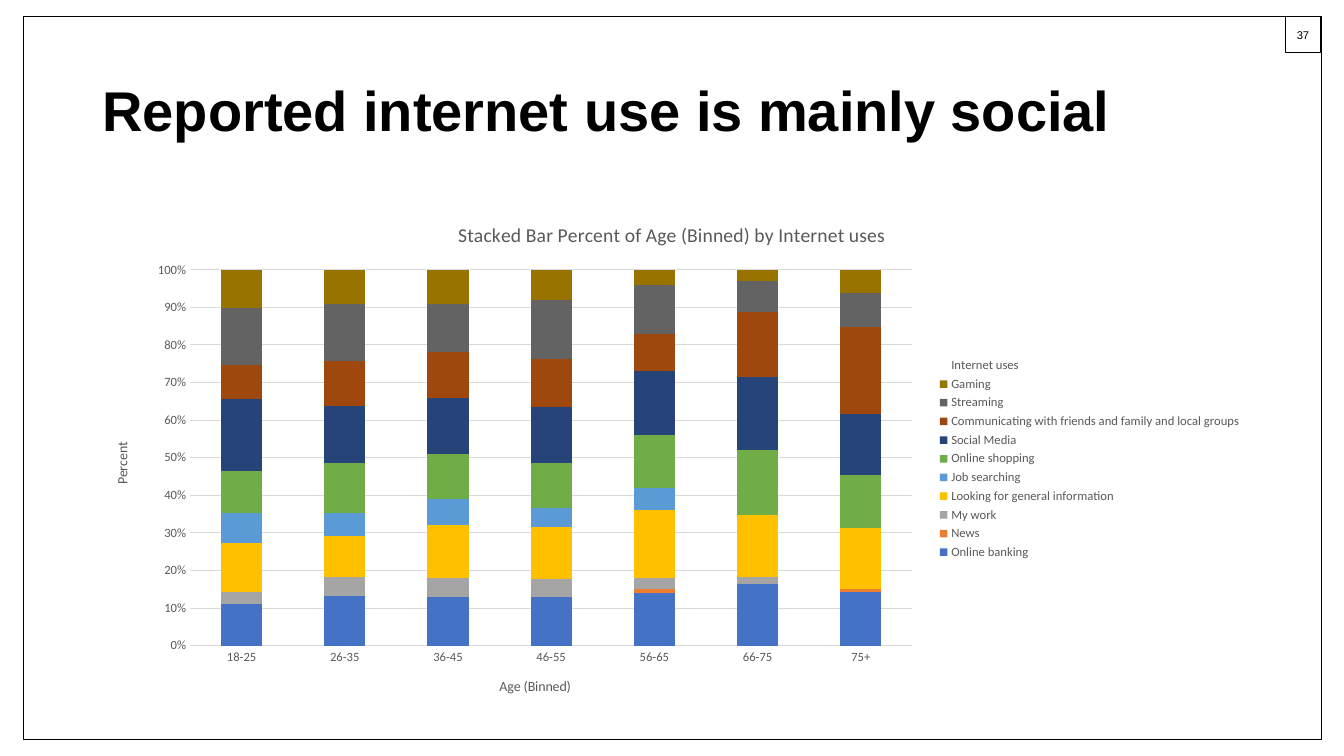
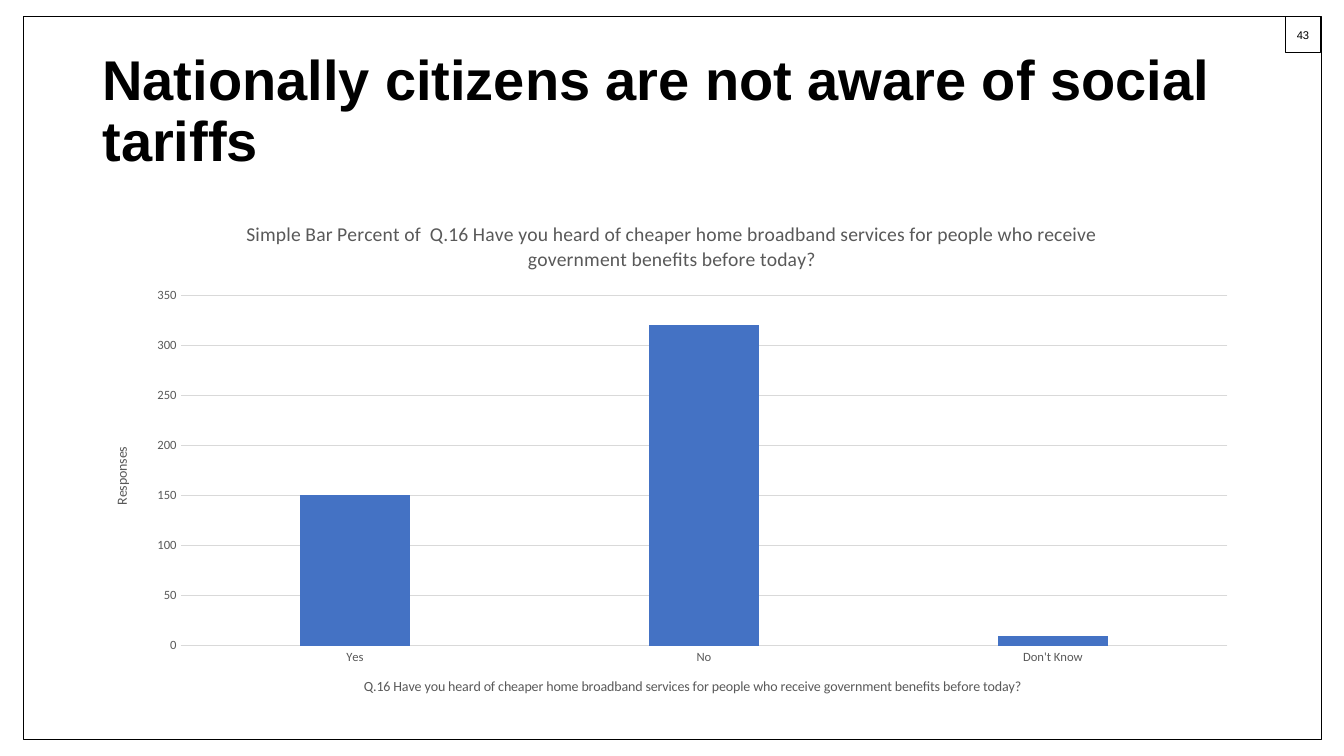
from lxml.etree import SubElement as Sub
from pptx import Presentation
from pptx.chart.data import CategoryChartData as Data
from pptx.dml.color import RGBColor as Rgb
from pptx.enum.chart import XL_CHART_TYPE as Kind, XL_LEGEND_POSITION as Side, XL_TICK_MARK as Tick
from pptx.enum.shapes import MSO_SHAPE as Form
from pptx.enum.text import MSO_ANCHOR as Anchor, MSO_AUTO_SIZE as Fit, PP_ALIGN as Align
from pptx.oxml.ns import qn
from pptx.util import Pt

PX = 9525
HEX = {
    "ink": "000000", "gray": "595959", "grid": "D9D9D9",
    "blue": "4472C4", "orange": "ED7D31", "silver": "A5A5A5", "gold": "FFC000",
    "sky": "5B9BD5", "green": "70AD47", "navy": "264478", "rust": "9E480E",
    "slate": "636363", "olive": "997300",
}
FRAME = (22, 16, 1236, 688)
TITLE = (88, 38, 1104, 139)
CHART = (88, 192, 1104, 490)
TAB = 34

USES = {
    "kind": Kind.COLUMN_STACKED_100,
    "title": "Stacked Bar Percent of Age (Binned) by Internet uses",
    "axes": ("Age (Binned)", "Percent"),
    "cats": ["18-25", "26-35", "36-45", "46-55", "56-65", "66-75", "75+"],
    "rows": [
        ("Online banking", [11, 13, 13, 13, 14, 16, 14], "blue"),
        ("News", [None, None, None, 0, 1, None, 1], "orange"),
        ("My work", [3, 5, 5, 5, 3, 2, None], "silver"),
        ("Looking for general information", [13, 11, 14, 14, 18, 16, 16], "gold"),
        ("Job searching", [8, 6, 7, 5, 6, 0, None], "sky"),
        ("Online shopping", [11, 13, 12, 12, 14, 17, 14], "green"),
        ("Social Media", [19, 15, 15, 15, 17, 19, 16], "navy"),
        ("Communicating with friends and family and local groups",
         [9, 12, 12, 13, 10, 17, 23], "rust"),
        ("Streaming", [15, 15, 13, 16, 13, 8, 9], "slate"),
        ("Gaming", [10, 9, 9, 8, 4, 3, 6], "olive"),
        ("Internet uses", [None] * 7, None),
    ],
    "plot": {"gap_width": 150, "overlap": 100},
    "area": (93, 65, 688, 358),
    "format": "0%",
    "legend": True,
}
AWARE = {
    "kind": Kind.COLUMN_CLUSTERED,
    "title": "Simple Bar Percent of  Q.16 Have you heard of cheaper home broadband "
             "services for people who receive government benefits before today?",
    "axes": ("Q.16 Have you heard of cheaper home broadband services for people "
             "who receive government benefits before today?", "Responses"),
    "cats": ["Yes", "No", "Don't Know"],
    "rows": [("Series 1", [150, 320, 10], "blue")],
    "plot": {"gap_width": 219, "overlap": -27},
    "area": (84, 89, 997, 334),
    "format": "General",
    "legend": False,
}
PAGES = [
    ("37", "Reported internet use is mainly social", USES),
    ("43", "Nationally citizens are not aware of social tariffs", AWARE),
]


def put(item, **vals):
    """Set each named attribute of an item."""
    for name, val in vals.items():
        setattr(item, name, val)


def emu(box):
    """Turn a box in px into EMU."""
    return [n * PX for n in box]


def style(font, size, tone="gray", face="Calibri", bold=False):
    """Format a font."""
    put(font, size=Pt(size), name=face, bold=bold)
    font.color.rgb = Rgb.from_string(HEX[tone])


def rule(line, tone, width):
    """Format a line."""
    line.color.rgb = Rgb.from_string(HEX[tone])
    line.width = Pt(width)


def rect(slide, box):
    """Draw an unfilled black outline and return it."""
    shape = slide.shapes.add_shape(Form.RECTANGLE, *emu(box))
    shape.shadow.inherit = False
    shape.fill.background()
    rule(shape.line, "ink", 0.5)
    return shape


def border(slide, box, num):
    """Frame the slide, with its number in the top right corner."""
    x, y, w, h = box
    tab = rect(slide, (x + w - TAB, y, TAB, TAB))
    frame = tab.text_frame
    put(frame, text=num, vertical_anchor=Anchor.MIDDLE, word_wrap=True,
        margin_left=0, margin_right=0)
    para = frame.paragraphs[0]
    para.alignment = Align.CENTER
    style(para.runs[0].font, 8, "ink", "Arial")
    rect(slide, box)


def head(slide, box, text):
    """Fill and place the slide title."""
    shape = slide.shapes.title
    put(shape, **dict(zip(("left", "top", "width", "height"), emu(box))))
    frame = shape.text_frame
    put(frame, text=text, vertical_anchor=Anchor.MIDDLE, word_wrap=True,
        auto_size=Fit.NONE)
    para = frame.paragraphs[0]
    put(para, alignment=Align.LEFT, line_spacing=0.9)
    style(para.runs[0].font, 40, "ink", "Arial", True)


def label(title, text, size):
    """Write a chart or axis title."""
    title.text_frame.text = text
    style(title.text_frame.paragraphs[0].runs[0].font, size)


def layout(chart, box, area):
    """Fix the inner plot area inside the chart box."""
    plot = chart._chartSpace.find(".//" + qn("c:plotArea"))
    for old in plot.findall(qn("c:layout")):
        plot.remove(old)
    node = Sub(plot, qn("c:layout"))
    plot.insert(0, node)
    spot = Sub(node, qn("c:manualLayout"))
    w, h = box[2:]
    vals = {"layoutTarget": "inner", "xMode": "edge", "yMode": "edge"}
    vals.update((key, str(n / full)) for key, n, full in zip("xywh", area, (w, h, w, h)))
    for key, val in vals.items():
        Sub(spot, qn("c:" + key)).set("val", val)


def graph(slide, box, info):
    """Draw a column chart in the given box."""
    data = Data()
    data.categories = info["cats"]
    for name, vals, _ in info["rows"]:
        data.add_series(name, vals)
    chart = slide.shapes.add_chart(info["kind"], *emu(box), data).chart
    style(chart.font, 10, "ink")
    chart.has_title = True
    label(chart.chart_title, info["title"], 14)
    chart.chart_title.include_in_layout = False

    plot = chart.plots[0]
    put(plot, vary_by_categories=False, **info["plot"])
    for row, (_, _, tone) in zip(plot.series, info["rows"]):
        if tone:
            row.format.fill.solid()
            row.format.fill.fore_color.rgb = Rgb.from_string(HEX[tone])
        else:
            row.format.fill.background()
        row.format.line.fill.background()

    cat, val = chart.category_axis, chart.value_axis
    for axis, text in zip((cat, val), info["axes"]):
        put(axis, major_tick_mark=Tick.NONE, minor_tick_mark=Tick.NONE)
        style(axis.tick_labels.font, 9)
        label(axis.axis_title, text, 10)
    rule(cat.format.line, "grid", 0.75)
    val.format.line.fill.background()
    val.has_major_gridlines = True
    rule(val.major_gridlines.format.line, "grid", 0.75)
    put(val.tick_labels, number_format=info["format"], number_format_is_linked=False)

    chart.has_legend = info["legend"]
    if info["legend"]:
        put(chart.legend, position=Side.RIGHT, include_in_layout=False)
        style(chart.legend.font, 9)
    layout(chart, box, info["area"])


def main():
    """Build and save the deck."""
    deck = Presentation()
    put(deck, slide_width=1280 * PX, slide_height=720 * PX)
    for num, text, info in PAGES:
        slide = deck.slides.add_slide(deck.slide_layouts[5])
        border(slide, FRAME, num)
        head(slide, TITLE, text)
        graph(slide, CHART, info)
    deck.save("out.pptx")


if __name__ == "__main__":
    main()
